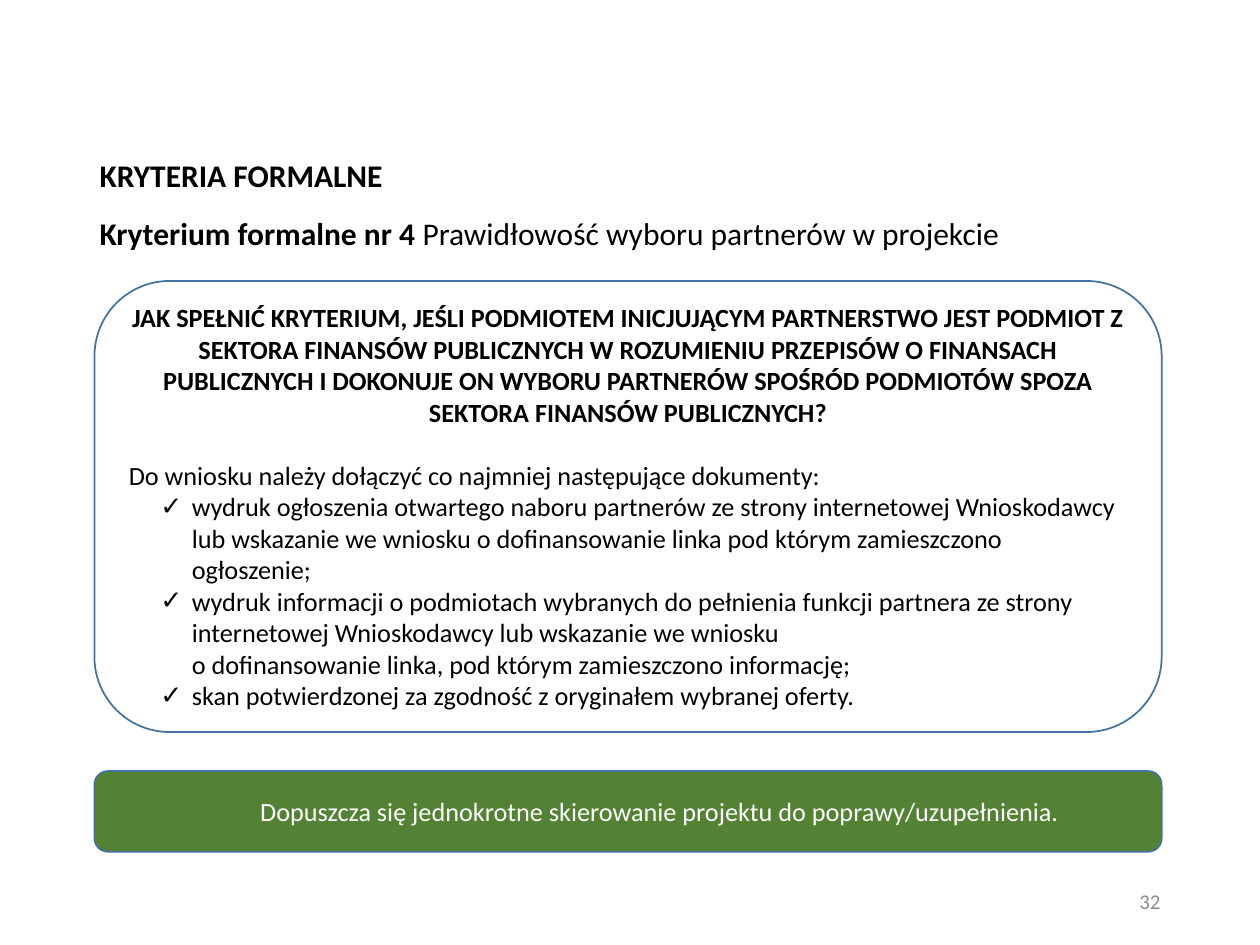
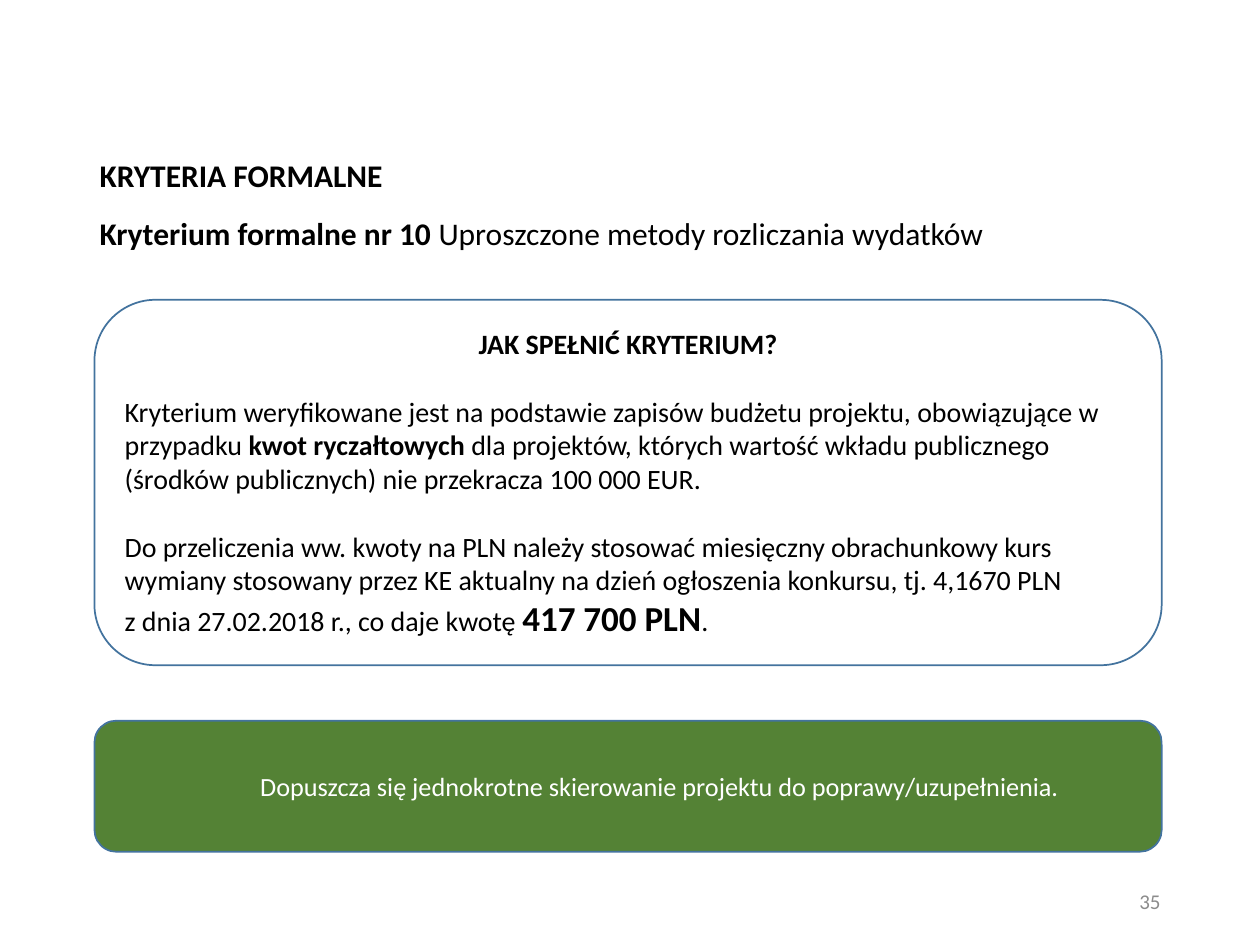
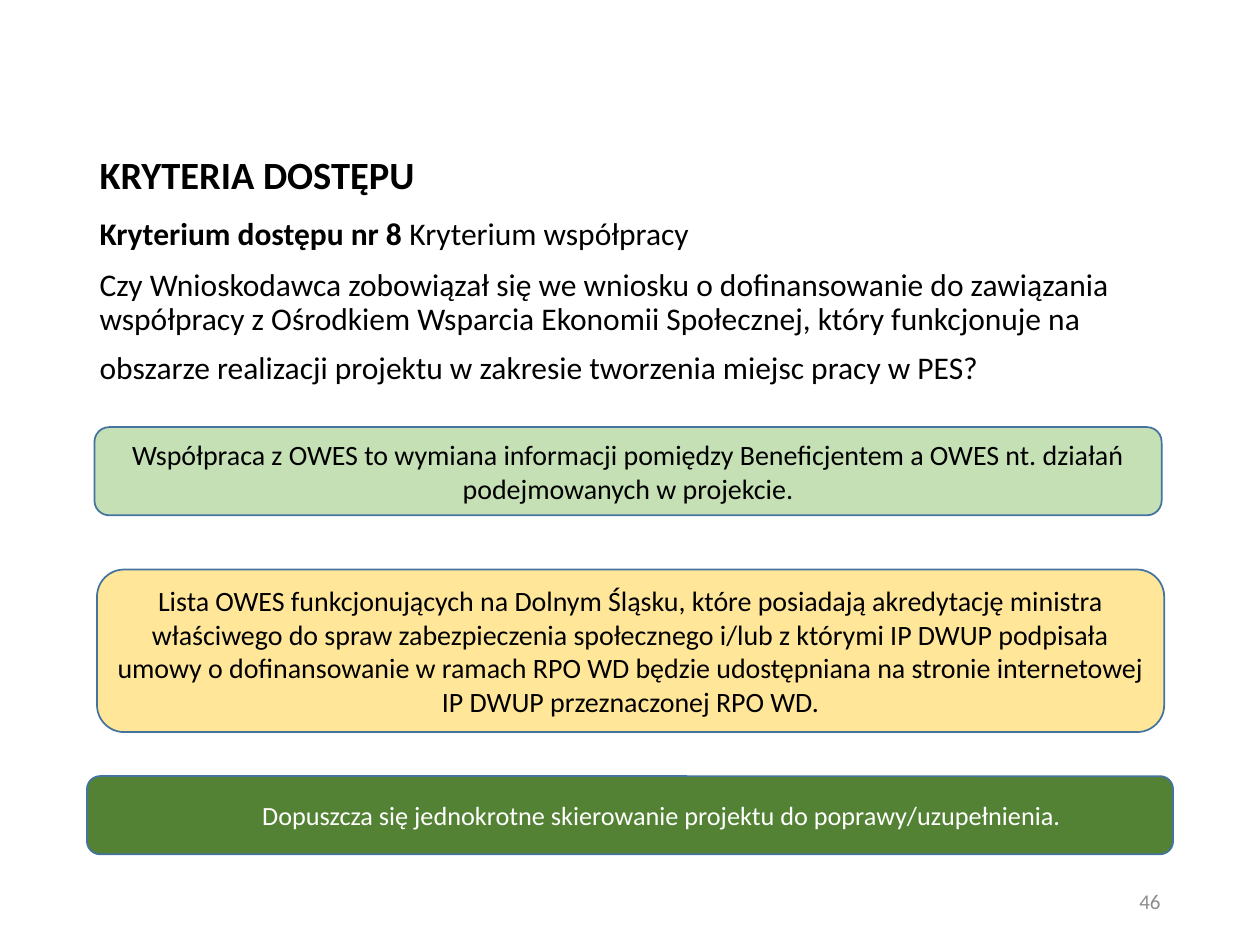
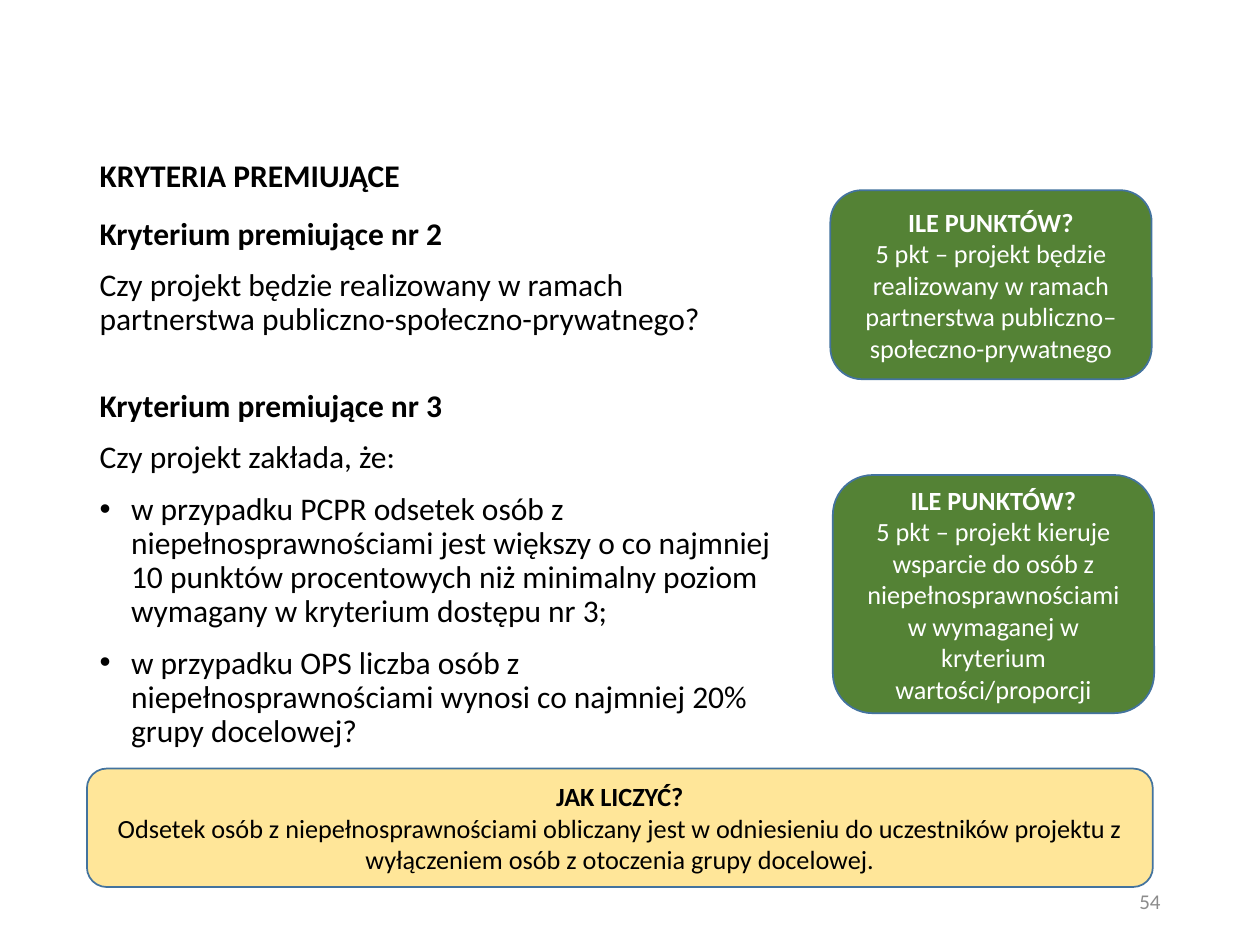
"""Build four slides on project selection criteria."""
from copy import deepcopy
from dataclasses import dataclass

from lxml import etree
from pptx import Presentation
from pptx.dml.color import RGBColor
from pptx.enum import shapes, text
from pptx.oxml import ns
from pptx.util import Inches, Pt

FONT = "Calibri"
BLACK = RGBColor(0x00, 0x00, 0x00)
WHITE = RGBColor(0xFF, 0xFF, 0xFF)
GREY = RGBColor(0x8C, 0x8C, 0x8C)
BLUE = RGBColor(0x43, 0x73, 0x9E)
GREEN = RGBColor(0x54, 0x82, 0x35)
PALE_GREEN = RGBColor(0xC5, 0xE0, 0xB4)
YELLOW = RGBColor(0xFF, 0xE6, 0x99)
LEFT, CENTER, RIGHT = text.PP_ALIGN.LEFT, text.PP_ALIGN.CENTER, text.PP_ALIGN.RIGHT
BODY_SIZE = 18
MARGIN, TOP_TITLE, TOP_BODY = 0.69, 1.05, 1.68
PANEL_LEFT, PANEL_WIDTH = 0.75, 8.47


@dataclass(frozen=True)
class Run:
    """A stretch of text; size overrides that of its box."""
    text: str
    bold: bool = False
    size: float | None = None


@dataclass(frozen=True)
class Para:
    """A paragraph with its layout; margin and indent in inches."""
    runs: tuple[Run, ...]
    align: text.PP_ALIGN = LEFT
    before: float = 0
    margin: float = 0
    indent: float = 0
    bullet: str = ""
    spacing: float = 1.0


@dataclass(frozen=True)
class Panel:
    """A rounded box with text; box is left, top, width, height."""
    box: tuple[float, float, float, float]
    fill: RGBColor
    paras: tuple[Para, ...]
    size: float = 15
    color: RGBColor = BLACK


@dataclass(frozen=True)
class Page:
    """The content of one slide."""
    number: int
    title: str
    body: tuple[Para, ...]
    body_size: tuple[float, float]
    panels: tuple[Panel, ...]
    title_size: float = BODY_SIZE


def add_text(p, content: str, *, size: float, color: RGBColor = BLACK, bold: bool = False) -> None:
    """Add formatted text to a paragraph, turning newlines into line breaks."""
    for i, line in enumerate(content.split("\n")):
        if i:
            p.add_line_break()
        r = p.add_run()
        r.text = line
        font = r.font
        font.name, font.size, font.bold = FONT, Pt(size), bold
        font.color.rgb = color
        if i:
            r._r.getprevious().append(deepcopy(r._r.rPr))


def fill_frame(tf, paras: tuple[Para, ...], size: float, color: RGBColor, anchor) -> None:
    """Write paragraphs into a text frame."""
    tf.word_wrap = True
    tf.auto_size = text.MSO_AUTO_SIZE.NONE
    tf.vertical_anchor = anchor
    for i, para in enumerate(paras):
        p = tf.add_paragraph() if i else tf.paragraphs[0]
        pPr = p._p.get_or_add_pPr()
        pPr.set("marL", str(Inches(para.margin)))
        pPr.set("indent", str(Inches(para.indent)))
        if para.bullet:
            etree.SubElement(pPr, ns.qn("a:buFont")).set("typeface", "Arial")
            etree.SubElement(pPr, ns.qn("a:buChar")).set("char", para.bullet)
        else:
            etree.SubElement(pPr, ns.qn("a:buNone"))
        p.alignment = para.align
        p.line_spacing = para.spacing
        p.space_before, p.space_after = Pt(para.before), Pt(0)
        for run in para.runs:
            add_text(p, run.text, size=run.size or size, color=color, bold=run.bold)


def place(sp, left: float, top: float, width: float, height: float) -> None:
    """Set the position and size of a shape in inches."""
    sp.left, sp.top, sp.width, sp.height = map(Inches, (left, top, width, height))


def add_panel(s, panel: Panel) -> None:
    """Draw a rounded box with its text."""
    sp = s.shapes.add_shape(shapes.MSO_SHAPE.ROUNDED_RECTANGLE, *map(Inches, panel.box))
    sp.shadow.inherit = False
    sp.fill.solid()
    sp.fill.fore_color.rgb = panel.fill
    sp.line.color.rgb = BLUE
    sp.line.width = Pt(1)
    fill_frame(sp.text_frame, panel.paras, panel.size, panel.color, text.MSO_ANCHOR.MIDDLE)


def add_page(prs, page: Page) -> None:
    """Add a slide with title, body, slide number and panels."""
    s = prs.slides.add_slide(prs.slide_layouts[1])
    title, body = s.shapes.title, s.placeholders[1]
    place(title, MARGIN, TOP_TITLE, 8.62, 0.71)
    heading = Para((Run(page.title, True),), spacing=0.9)
    fill_frame(title.text_frame, (heading,), page.title_size, BLACK, text.MSO_ANCHOR.MIDDLE)
    place(body, MARGIN, TOP_BODY, *page.body_size)
    fill_frame(body.text_frame, page.body, BODY_SIZE, BLACK, text.MSO_ANCHOR.TOP)
    number = s.shapes.add_textbox(*map(Inches, (7.06, 6.95, 2.25, 0.4)))
    fill_frame(number.text_frame, (Para((Run(str(page.number)),), RIGHT),), 12, GREY,
               text.MSO_ANCHOR.MIDDLE)
    for panel in page.panels:
        add_panel(s, panel)


def body_para(*runs: Run, before: float = 10, bullet: str = "") -> Para:
    """Return a body paragraph, hanging if it has a bullet."""
    hang = 0.25 if bullet else 0
    return Para(runs, before=before, margin=hang, indent=-hang, bullet=bullet, spacing=0.9)


def criterion(label: str, name: str = "", before: float = 0) -> Para:
    """Return the line that names a criterion."""
    runs = (Run(label, True), Run(f" {name}")) if name else (Run(label, True),)
    return body_para(*runs, before=before)


def check(content: str) -> Para:
    """Return a check-marked list item."""
    return Para((Run(content),), margin=0.5, indent=-0.25, bullet="✓")


def centered(content: str, bold: bool = False) -> Para:
    """Return a centred paragraph."""
    return Para((Run(content, bold),), CENTER)


def correction(top: float, height: float, left: float = PANEL_LEFT,
               width: float = PANEL_WIDTH) -> Panel:
    """Return the green note on correcting a project."""
    note = Run("Dopuszcza się jednokrotne skierowanie projektu do poprawy/uzupełnienia.")
    return Panel((left, top, width, height), GREEN, (Para((note,), CENTER, margin=0.5),), color=WHITE)


def points(left: float, top: float, height: float, content: str) -> Panel:
    """Return a green box that states the points awarded."""
    return Panel((left, top, 2.55, height), GREEN,
                 (centered("ILE PUNKTÓW?", True), centered(content)), color=WHITE)


PAGES = (
    Page(32, "KRYTERIA FORMALNE",
         (criterion("Kryterium formalne nr 4", "Prawidłowość wyboru partnerów w projekcie"),),
         (8.62, 0.7),
         (Panel((PANEL_LEFT, 2.23, PANEL_WIDTH, 3.58), WHITE, (
             centered("JAK SPEŁNIĆ KRYTERIUM, JEŚLI PODMIOTEM INICJUJĄCYM PARTNERSTWO JEST PODMIOT Z "
                      "SEKTORA FINANSÓW PUBLICZNYCH W ROZUMIENIU PRZEPISÓW O FINANSACH PUBLICZNYCH "
                      "I DOKONUJE ON WYBORU PARTNERÓW SPOŚRÓD PODMIOTÓW SPOZA SEKTORA FINANSÓW "
                      "PUBLICZNYCH?", True),
             Para((Run("Do wniosku należy dołączyć co najmniej następujące dokumenty:"),), before=18),
             check("wydruk ogłoszenia otwartego naboru partnerów ze strony internetowej Wnioskodawcy "
                   "lub wskazanie we wniosku o dofinansowanie linka pod którym zamieszczono ogłoszenie;"),
             check("wydruk informacji o podmiotach wybranych do pełnienia funkcji partnera ze strony "
                   "internetowej Wnioskodawcy lub wskazanie we wniosku \n"
                   "o dofinansowanie linka, pod którym zamieszczono informację;"),
             check("skan potwierdzonej za zgodność z oryginałem wybranej oferty."))),
          correction(6.12, 0.64))),
    Page(35, "KRYTERIA FORMALNE",
         (criterion("Kryterium formalne nr 10", "Uproszczone metody rozliczania wydatków"),),
         (8.62, 0.7),
         (Panel((PANEL_LEFT, 2.38, PANEL_WIDTH, 2.9), WHITE, (
             centered("JAK SPEŁNIĆ KRYTERIUM?", True),
             Para((Run("Kryterium weryfikowane jest na podstawie zapisów budżetu projektu, "
                       "obowiązujące w przypadku "),
                   Run("kwot ryczałtowych", True),
                   Run(" dla projektów, których wartość wkładu publicznego (środków publicznych) "
                       "nie przekracza 100 000 EUR.")), before=19.5),
             Para((Run("Do przeliczenia ww. kwoty na PLN należy stosować miesięczny obrachunkowy kurs "
                       "wymiany stosowany przez KE aktualny na dzień ogłoszenia konkursu, tj. "
                       "4,1670 PLN \nz dnia 27.02.2018 r., co daje kwotę "),
                   Run("417 700 PLN", True, 20), Run(".")), before=19.5)), size=16),
          correction(5.72, 1.04))),
    Page(46, "KRYTERIA DOSTĘPU",
         (criterion("Kryterium dostępu nr 8", "Kryterium współpracy"),
          body_para(Run("Czy Wnioskodawca zobowiązał się we wniosku o dofinansowanie do zawiązania "
                        "współpracy z Ośrodkiem Wsparcia Ekonomii Społecznej, który funkcjonuje na "
                        "obszarze realizacji projektu w zakresie tworzenia miejsc pracy w PES?"),
                    Run(" ", size=28))),
         (8.62, 1.52),
         (correction(6.16, 0.62, MARGIN, 8.62),
          Panel((PANEL_LEFT, 3.39, PANEL_WIDTH, 0.7), PALE_GREEN, (
              centered("Współpraca z OWES to wymiana informacji pomiędzy Beneficjentem a OWES nt. "
                       "działań podejmowanych w projekcie."),), size=16),
          Panel((0.77, 4.52, PANEL_WIDTH, 1.29), YELLOW, (
              centered("Lista OWES funkcjonujących na Dolnym Śląsku, które posiadają akredytację "
                       "ministra właściwego do spraw zabezpieczenia społecznego i/lub z którymi IP DWUP "
                       "podpisała umowy o dofinansowanie w ramach RPO WD będzie udostępniana na stronie "
                       "internetowej IP DWUP przeznaczonej RPO WD."),), size=16)),
         title_size=22),
    Page(54, "KRYTERIA PREMIUJĄCE",
         (criterion("Kryterium premiujące nr 2"),
          body_para(Run("Czy projekt będzie realizowany w ramach partnerstwa "
                        "publiczno-społeczno-prywatnego?")),
          criterion("Kryterium premiujące nr 3", before=30),
          body_para(Run("Czy projekt zakłada, że:")),
          body_para(Run("w przypadku PCPR odsetek osób z niepełnosprawnościami jest większy o co "
                        "najmniej 10 punktów procentowych niż minimalny poziom wymagany w kryterium "
                        "dostępu nr 3;"), bullet="•"),
          body_para(Run("w przypadku OPS liczba osób z niepełnosprawnościami wynosi co najmniej 20% "
                        "grupy docelowej?"), bullet="•")),
         (5.64, 4.32),
         (points(6.59, 1.51, 1.5, "5 pkt – projekt będzie realizowany w ramach partnerstwa "
                                  "publiczno–społeczno-prywatnego"),
          points(6.61, 3.77, 1.89, "5 pkt – projekt kieruje wsparcie do osób z niepełnosprawnościami "
                                   "w wymaganej w kryterium wartości/proporcji"),
          Panel((MARGIN, 6.1, 8.46, 0.94), YELLOW, (
              centered("JAK LICZYĆ?", True),
              centered("Odsetek osób z niepełnosprawnościami obliczany jest w odniesieniu do uczestników "
                       "projektu z wyłączeniem osób z otoczenia grupy docelowej."))))),
)


def main() -> None:
    """Build and save the presentation."""
    prs = Presentation()
    prs.slide_width, prs.slide_height = Inches(10), Inches(7.5)
    for page in PAGES:
        add_page(prs, page)
    prs.save("out.pptx")


if __name__ == "__main__":
    main()
